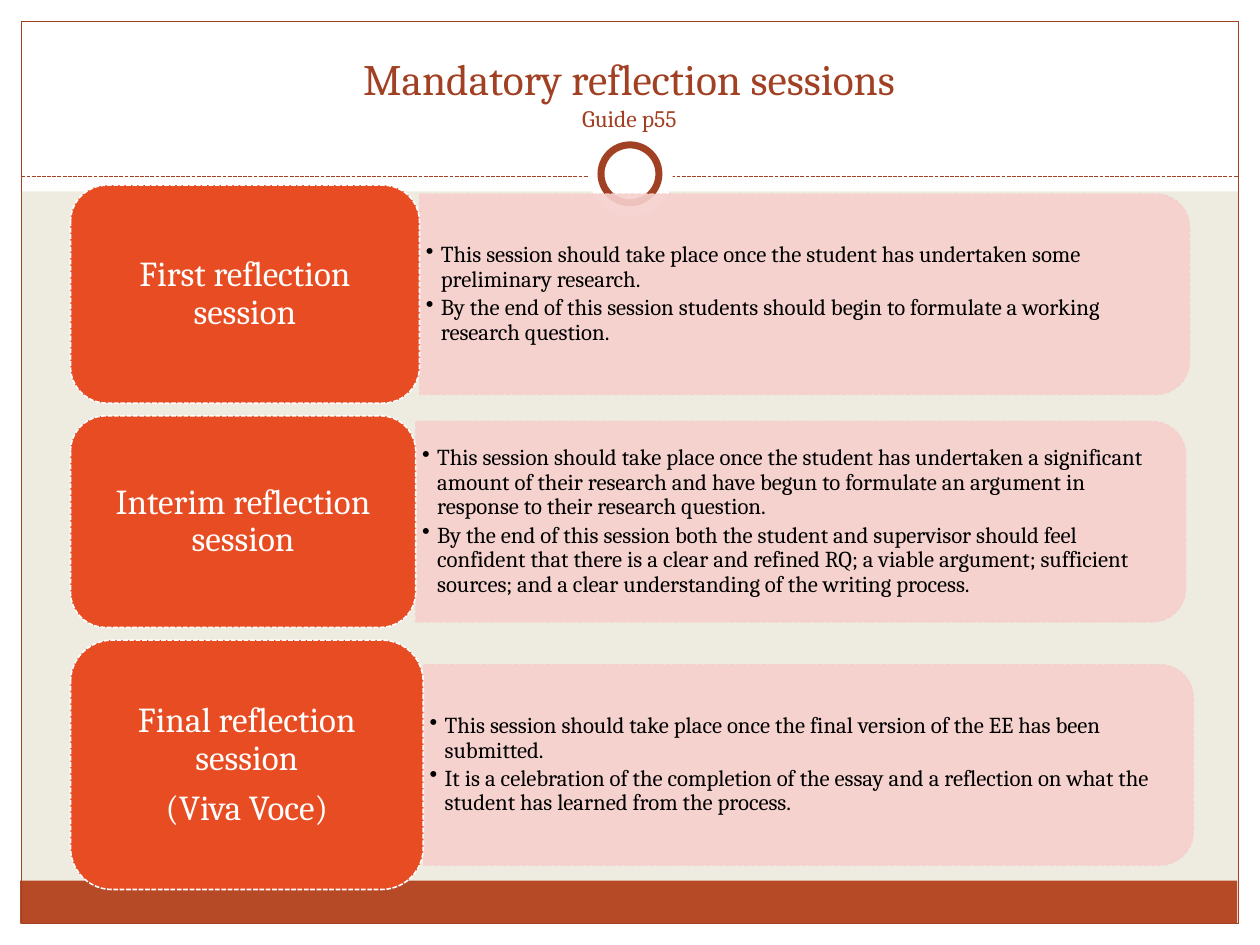
from lxml.etree import SubElement
from pptx import Presentation
from pptx.dml.color import RGBColor
from pptx.enum.dml import MSO_LINE
from pptx.enum.shapes import MSO_CONNECTOR, MSO_SHAPE
from pptx.enum.text import MSO_ANCHOR, MSO_AUTO_SIZE, PP_ALIGN
from pptx.oxml.ns import qn
from pptx.util import Inches, Pt

FONT = "Cambria"
WHITE, BLACK, CREAM = "FFFFFF", "000000", "EEECE1"
RUST, BRICK, ORANGE, PINK = "A14022", "B64926", "E84C22", "F6D0CD"

LABEL_LEFT, FIRST_TOP, ROW_GAP = 0.56, 1.47, 0.1
PANEL_LENGTH, PANEL_HEIGHT = 6.11, 1.59
BULLETS_WIDTH, BULLETS_HEIGHT = 6.03, 1.43

# label paragraphs, label width, label height, bullets
SESSIONS = [
    (["First reflection session"], 2.77, 1.73, [
        "This session should take place once the student has undertaken some "
        "preliminary research.",
        "By the end of this session students should begin to formulate a "
        "working research question.",
    ]),
    (["Interim reflection session"], 2.74, 1.68, [
        "This session should take place once the student has undertaken a "
        "significant amount of their research and have begun to formulate an "
        "argument in response to their research question.",
        "By the end of this session both the student and supervisor should "
        "feel confident that there is a clear and refined RQ; a viable "
        "argument; sufficient sources; and a clear understanding of the "
        "writing process.",
    ]),
    (["Final reflection session", "(Viva Voce)"], 2.8, 1.98, [
        "This session should take place once the final version of the EE has "
        "been submitted.",
        "It is a celebration of the completion of the essay and a reflection "
        "on what the student has learned from the process.",
    ]),
]


def paint(color, value):
    color.rgb = RGBColor.from_string(value)


def add_box(page, kind, left, top, width, height, fill=None, line=None,
            weight=0.75, dash=None):
    box = page.shapes.add_shape(kind, Inches(left), Inches(top),
                                Inches(width), Inches(height))
    box.shadow.inherit = False
    if fill:
        box.fill.solid()
        paint(box.fill.fore_color, fill)
    else:
        box.fill.background()
    if line:
        paint(box.line.color, line)
        box.line.width = Pt(weight)
        box.line.dash_style = dash
    else:
        box.line.fill.background()
    return box


def set_opacity(box, percent):
    """Apply the opacity to the box's fill and line alike."""
    for color in box._element.spPr.iter(qn("a:srgbClr")):
        SubElement(color, qn("a:alpha"), val=str(percent * 1000))


def set_frame(frame, anchor, side, end):
    """Wrap the text, anchor it and set side and top/bottom margins."""
    frame.word_wrap = True
    frame.auto_size = MSO_AUTO_SIZE.NONE
    frame.vertical_anchor = anchor
    frame.margin_left = frame.margin_right = Inches(side)
    frame.margin_top = frame.margin_bottom = Inches(end)


def write_paragraphs(frame, texts, size, color, align, space_after):
    for index, text in enumerate(texts):
        para = frame.add_paragraph() if index else frame.paragraphs[0]
        para.text = text
        para.alignment = align
        para.line_spacing = 0.9
        para.space_after = Pt(space_after)
        para.font.name, para.font.size = FONT, Pt(size)
        paint(para.font.color, color)


def add_bullet(para):
    properties = para._p.get_or_add_pPr()
    properties.set("marL", str(Inches(0.12)))
    properties.set("indent", str(Inches(-0.12)))
    bullet = properties.makeelement(qn("a:buChar"), {"char": "•"})
    properties.insert_element_before(bullet, "a:tabLst", "a:defRPr", "a:extLst")


def add_backdrop(page):
    page.background.fill.solid()
    paint(page.background.fill.fore_color, CREAM)
    for left, top, width, height, fill in [
        (0, 7.33, 10, 0.17, WHITE),
        (0, 0, 10, 1.52, WHITE),
        (0, 0, 0.17, 7.5, WHITE),
        (9.83, 0, 0.17, 7.5, WHITE),
        (0.16, 6.99, 9.66, 0.34, BRICK),
    ]:
        add_box(page, MSO_SHAPE.RECTANGLE, left, top, width, height, fill)
    add_box(page, MSO_SHAPE.RECTANGLE, 0.17, 0.17, 9.66, 7.16, line=RUST)

    divider = page.shapes.add_connector(MSO_CONNECTOR.STRAIGHT, Inches(0.17),
                                        Inches(1.4), Inches(9.83), Inches(1.4))
    paint(divider.line.color, RUST)
    divider.line.width = Pt(0.75)
    divider.line.dash_style = MSO_LINE.SQUARE_DOT
    SubElement(divider._element.spPr, qn("a:effectLst"))

    add_box(page, MSO_SHAPE.OVAL, 4.67, 1.05, 0.67, 0.67, WHITE)
    add_box(page, MSO_SHAPE.OVAL, 4.77, 1.15, 0.46, 0.46, WHITE, RUST, 4)


def fill_title(page, heading, reference):
    title = page.shapes.title
    page.shapes._spTree.append(title._element)  # in front of the backdrop
    title.left, title.top = Inches(0.33), Inches(0.25)
    title.width, title.height = Inches(9.33), Inches(0.83)
    set_frame(title.text_frame, MSO_ANCHOR.BOTTOM, 0.07, 0.03)
    para = title.text_frame.paragraphs[0]
    para.alignment = PP_ALIGN.CENTER
    para.font.name = FONT
    paint(para.font.color, RUST)
    for text, size in [(heading, 24.8), (reference, 13.5)]:
        if para.runs:
            para.add_line_break()
        span = para.add_run()
        span.text = text
        span.font.size = Pt(size)


def add_session(page, top, label_texts, width, height, bullets):
    middle = top + height / 2
    panel_left = LABEL_LEFT + width

    # The panel stands upright and is turned so its round corners face right.
    panel = add_box(page, MSO_SHAPE.ROUND_2_SAME_RECTANGLE,
                    panel_left + (PANEL_LENGTH - PANEL_HEIGHT) / 2,
                    middle - PANEL_LENGTH / 2, PANEL_HEIGHT, PANEL_LENGTH,
                    PINK, PINK, 0.9, MSO_LINE.SQUARE_DOT)
    panel.rotation = 90
    set_opacity(panel, 90)

    box = page.shapes.add_textbox(
        Inches(panel_left), Inches(middle - BULLETS_HEIGHT / 2),
        Inches(BULLETS_WIDTH), Inches(BULLETS_HEIGHT))
    set_frame(box.text_frame, MSO_ANCHOR.MIDDLE, 0.05, 0.03)
    write_paragraphs(box.text_frame, bullets, 13, BLACK, PP_ALIGN.LEFT, 2)
    for para in box.text_frame.paragraphs:
        add_bullet(para)

    label = add_box(page, MSO_SHAPE.ROUNDED_RECTANGLE, LABEL_LEFT, top, width,
                    height, ORANGE, WHITE, 0.9, MSO_LINE.SQUARE_DOT)
    set_frame(label.text_frame, MSO_ANCHOR.MIDDLE, 0.08, 0.04)
    write_paragraphs(label.text_frame, label_texts, 20, WHITE,
                     PP_ALIGN.CENTER, 7)


def main():
    deck = Presentation()
    deck.slide_width, deck.slide_height = Inches(10), Inches(7.5)
    page = deck.slides.add_slide(deck.slide_layouts[5])
    add_backdrop(page)
    fill_title(page, "Mandatory reflection sessions", "Guide p55")
    top = FIRST_TOP
    for label_texts, width, height, bullets in SESSIONS:
        add_session(page, top, label_texts, width, height, bullets)
        top += height + ROW_GAP
    deck.save("out.pptx")


if __name__ == "__main__":
    main()
